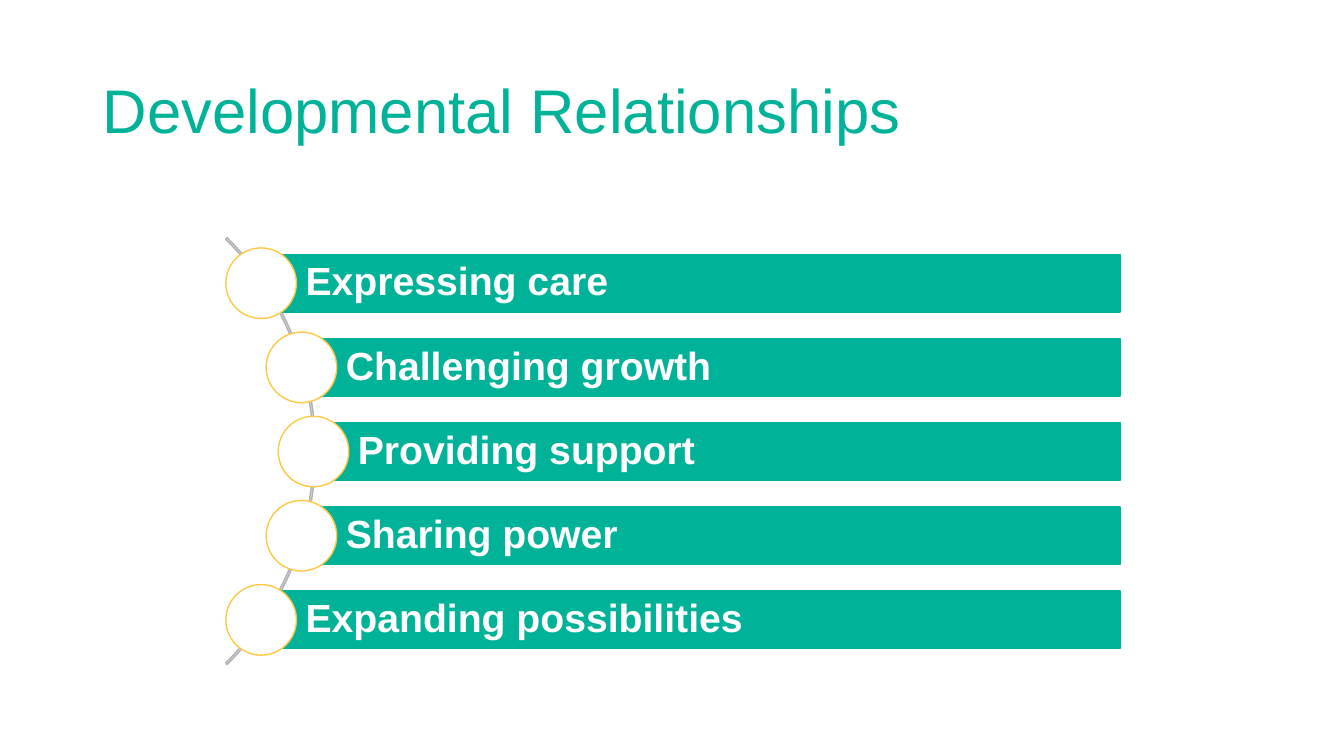
from pptx import Presentation
from pptx.dml.color import RGBColor
from pptx.enum.shapes import MSO_SHAPE as SHAPE
from pptx.enum.text import MSO_ANCHOR as ANCHOR, PP_ALIGN as ALIGN
from pptx.util import Inches, Pt

COLORS = {"teal": "00B398", "white": "FFFFFF", "gold": "FFC845",
          "arc": "D9D9D9", "arc_line": "B1B3B3"}


def add_figure(shapes, kind, left, top, width, height, fill, line):
    sp = shapes.add_shape(kind, Inches(left), Inches(top), Inches(width), Inches(height))
    sp.shadow.inherit = False
    sp.fill.solid()
    sp.fill.fore_color.rgb = RGBColor.from_string(COLORS[fill])
    sp.line.color.rgb = RGBColor.from_string(COLORS[line])
    sp.line.width = Pt(1)
    return sp


def set_text(sp, text, size, color, bold=False):
    tf = sp.text_frame
    tf.text = text
    tf.word_wrap = True
    tf.vertical_anchor = ANCHOR.MIDDLE
    p = tf.paragraphs[0]
    p.alignment = ALIGN.LEFT
    p.line_spacing = 0.9
    r = p.runs[0]
    r.font.name = "Arial"
    r.font.size = Pt(size)
    r.font.bold = bold
    r.font.color.rgb = RGBColor.from_string(COLORS[color])
    return tf


prs = Presentation()
prs.slide_width = Inches(13.33)
prs.slide_height = Inches(7.5)
s = prs.slides.add_slide(prs.slide_layouts[6])

title = s.shapes.add_textbox(Inches(0.92), Inches(0.4), Inches(11.5), Inches(1.45))
set_text(title, "Developmental Relationships", 44, "teal")

group = s.shapes.add_group_shape()
arc = add_figure(group.shapes, SHAPE.BLOCK_ARC, -2.86, 1.48, 5.99, 5.99, "arc", "arc_line")
for i, value in enumerate((189, 27, 0.0036)):
    arc.adjustments[i] = value

relationships = [
    ("Expressing care", 2.59),
    ("Challenging growth", 2.99),
    ("Providing support", 3.11),
    ("Sharing power", 2.99),
    ("Expanding possibilities", 2.59),
]
bar_right, bar_height, circle_size = 11.11, 0.57, 0.7
first_middle, row_step = 2.81, 0.835

for row, (label, left) in enumerate(relationships):
    middle = first_middle + row * row_step
    bar = add_figure(group.shapes, SHAPE.RECTANGLE, left, middle - bar_height / 2,
                     bar_right - left, bar_height, "teal", "teal")
    tf = set_text(bar, label, 28, "white", bold=True)
    tf.margin_left = Inches(0.44)
    tf.margin_top = tf.margin_right = tf.margin_bottom = Inches(0.08)
    add_figure(group.shapes, SHAPE.OVAL, left - circle_size / 2, middle - circle_size / 2,
               circle_size, circle_size, "white", "gold")

prs.save("out.pptx")
